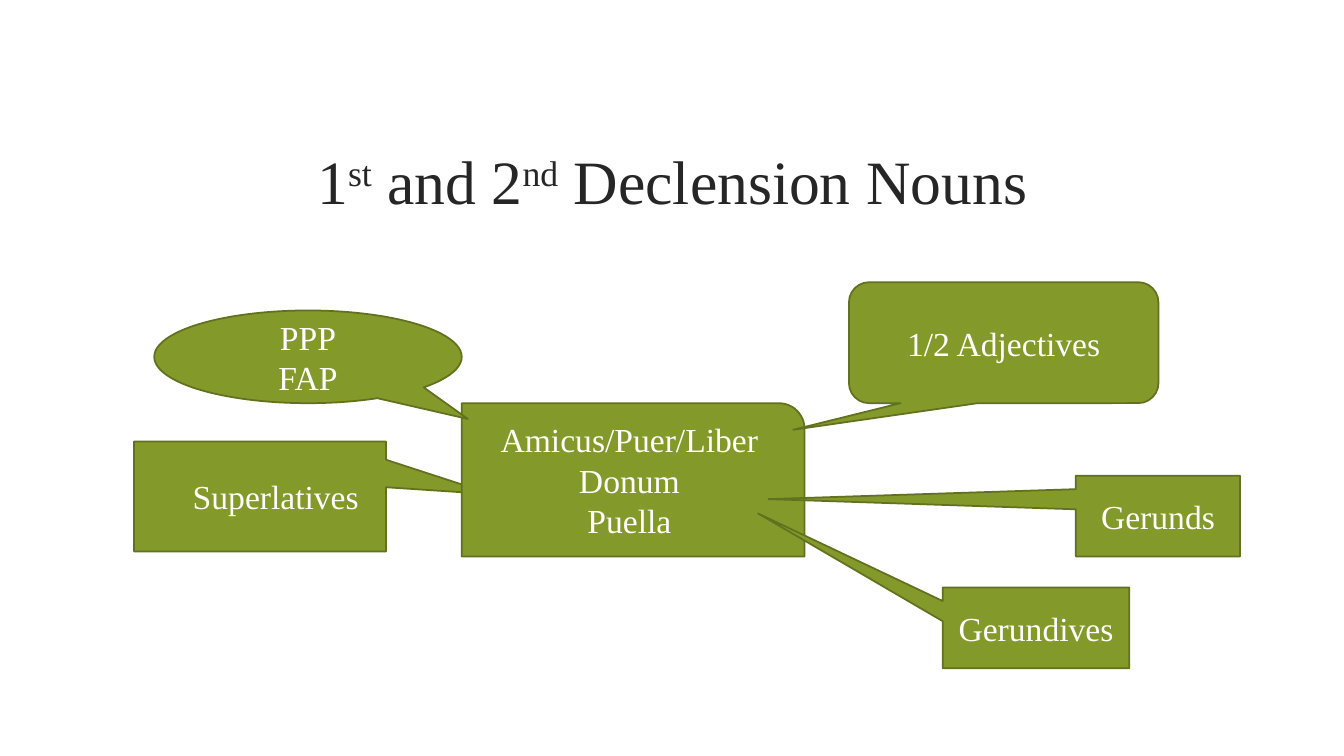
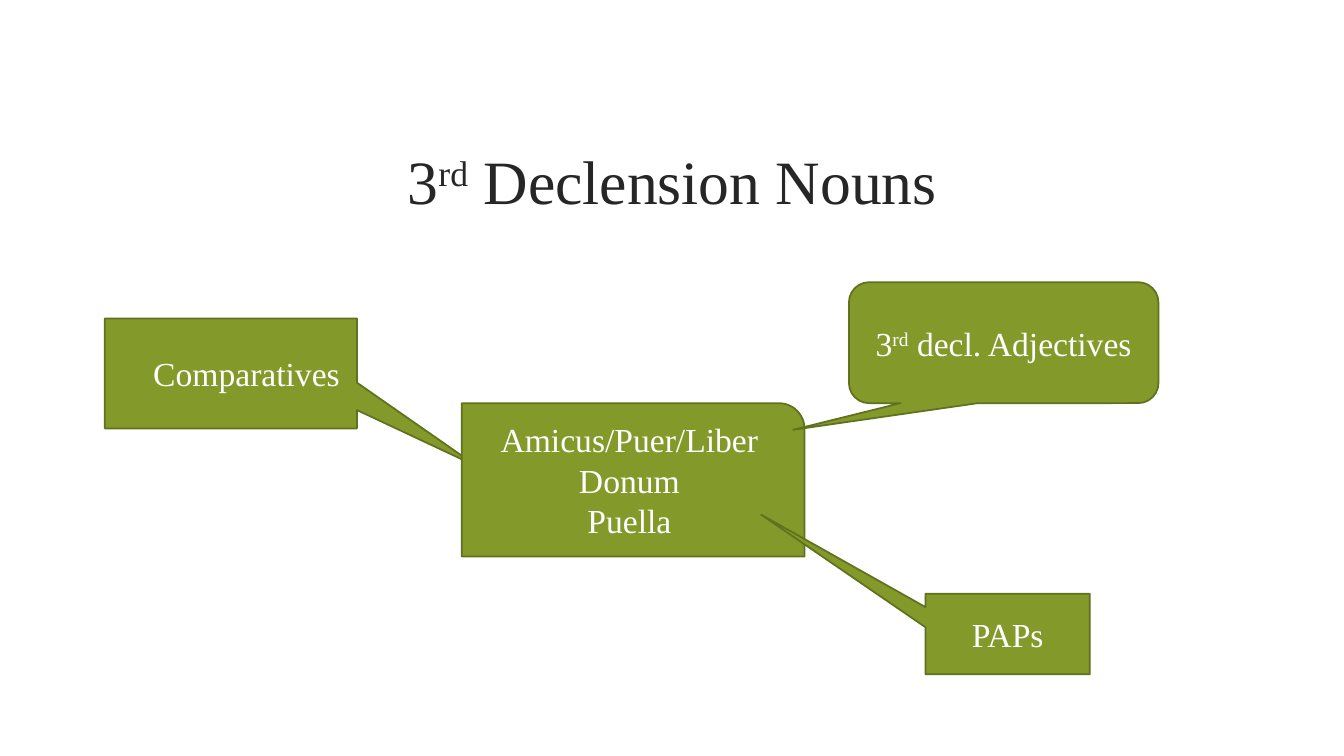
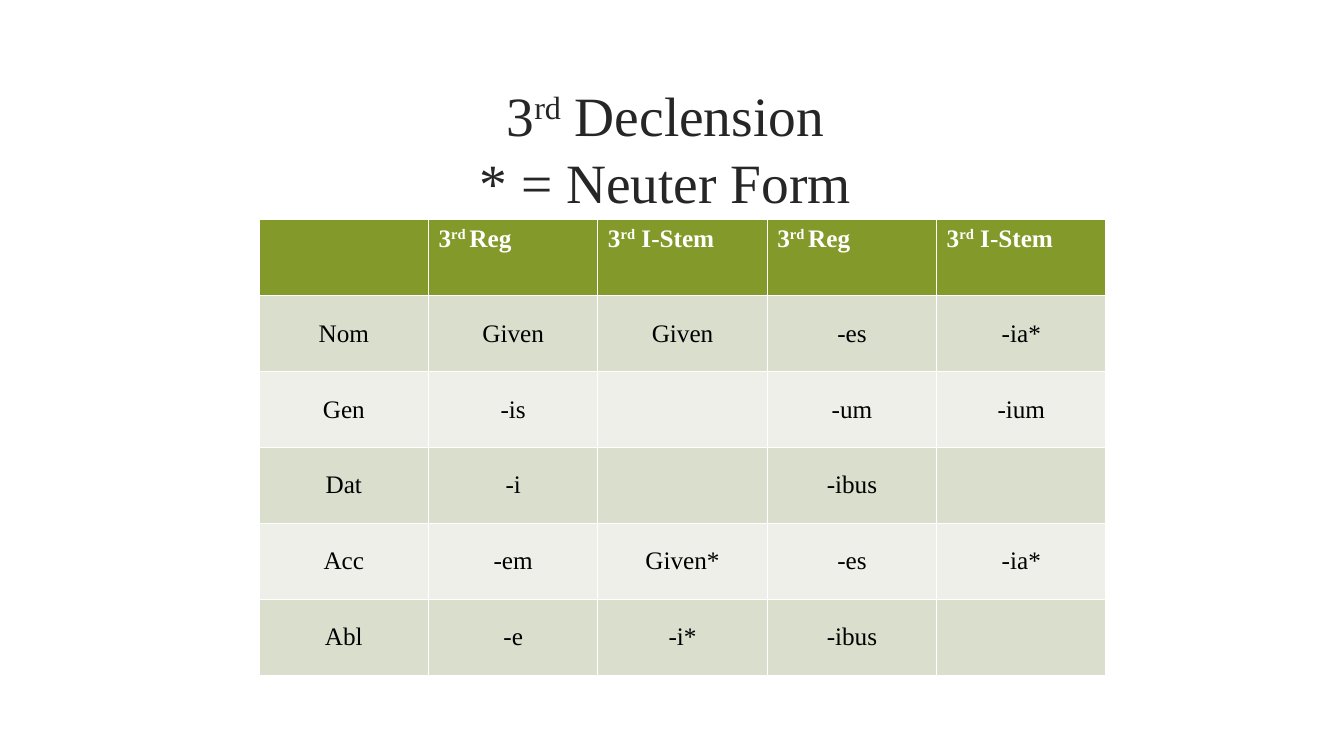
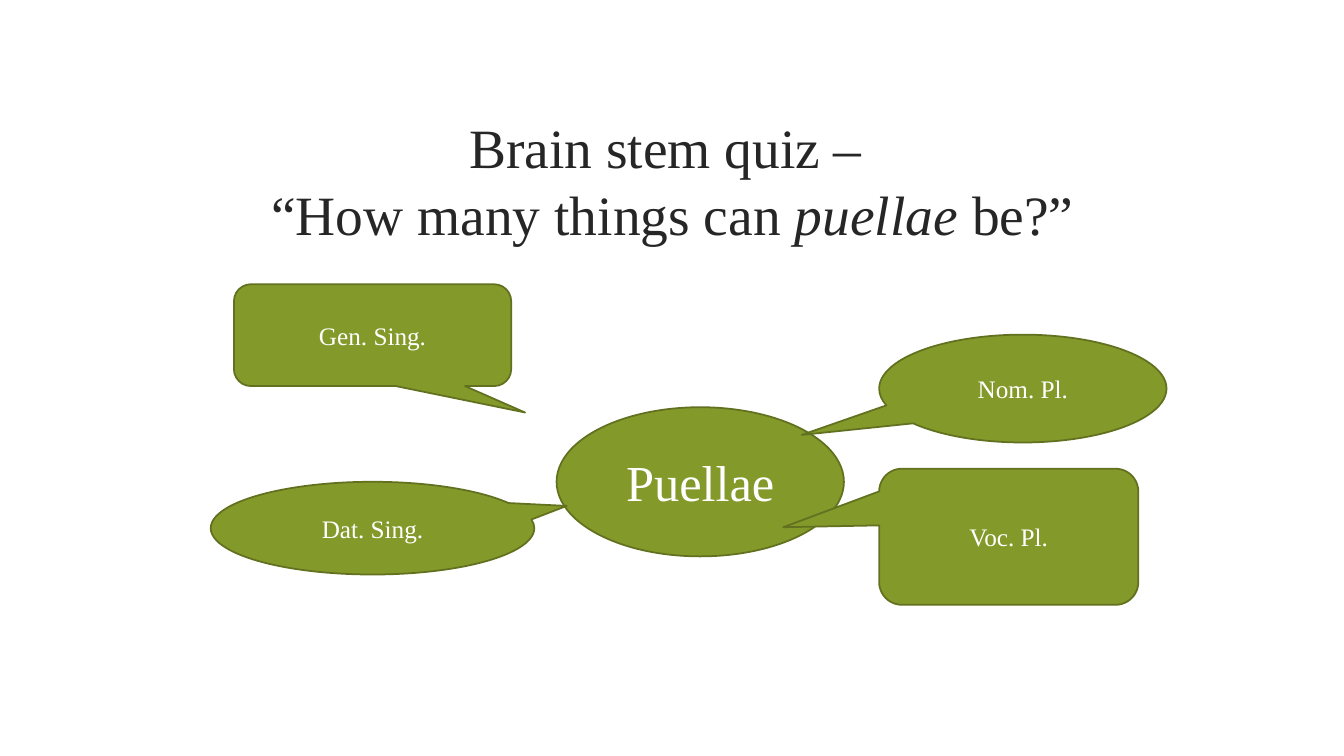
from dataclasses import dataclass

import pptx
import pptx.dml.color
import pptx.enum.shapes
import pptx.enum.text
import pptx.util
from pptx.util import Inches

COLORS = {
    "title": "262626",
    "green": "83992A",
    "outline": "61711F",
    "white": "FFFFFF",
    "black": "000000",
    "band_dark": "D9DECD",
    "band_light": "EDEFE8",
}
FONT = "Times New Roman"
CENTER = pptx.enum.text.PP_ALIGN.CENTER
LEFT = pptx.enum.text.PP_ALIGN.LEFT
MIDDLE = pptx.enum.text.MSO_ANCHOR.MIDDLE
TOP = pptx.enum.text.MSO_ANCHOR.TOP
Kind = pptx.enum.shapes.MSO_SHAPE


@dataclass(frozen=True)
class Bubble:
    """A green shape; tip is the callout point relative to its centre."""
    text: str
    kind: Kind
    left: float
    top: float
    width: float
    height: float
    tip: tuple[float, ...] = ()
    size: float = 24
    indent: float = 0


@dataclass(frozen=True)
class BubbleSlide:
    title: str
    title_size: float
    bubbles: tuple[Bubble, ...]


NOUNS = Bubble("Amicus/Puer/Liber\nDonum\nPuella", Kind.ROUND_1_RECTANGLE, 4.58, 4, 3.4, 1.52)


def adjectives(text: str) -> Bubble:
    return Bubble(text, Kind.ROUNDED_RECTANGULAR_CALLOUT, 8.42, 2.8, 3.07, 1.2, (-0.68, 0.72))


def degree(text: str, left: float, top: float, tip: tuple[float, float]) -> Bubble:
    return Bubble(text, Kind.RECTANGULAR_CALLOUT, left, top, 2.5, 1.09, tip, indent=0.31)


def verbal(text: str, left: float, top: float, width: float, tip: tuple[float, float]) -> Bubble:
    return Bubble(text, Kind.RECTANGULAR_CALLOUT, left, top, width, 0.8, tip)


FIRST_SECOND = BubbleSlide("1^st^ and 2^nd^ Declension Nouns", 44, (
    degree("Superlatives", 1.33, 4.38, (0.92, -0.02)),
    NOUNS,
    adjectives("1/2 Adjectives"),
    Bubble("PPP\nFAP", Kind.OVAL_CALLOUT, 1.53, 3.08, 3.05, 0.92, (0.52, 0.67)),
    verbal("Gerundives", 9.35, 5.83, 1.85, (-1.49, -1.42)),
    verbal("Gerunds", 10.67, 4.72, 1.63, (-2.37, -0.21)),
))
THIRD = BubbleSlide("3^rd^ Declension Nouns", 44, (
    degree("Comparatives", 1.04, 3.16, (0.98, 0.85)),
    NOUNS,
    adjectives("3^rd^ decl. Adjectives"),
    verbal("PAPs", 9.18, 5.89, 1.63, (-1.5, -1.48)),
))
QUIZ = BubbleSlide("Brain stem quiz – \v“How many things can _puellae_ be?”", 39.6, (
    Bubble("Puellae", Kind.OVAL, 5.52, 4.04, 2.85, 1.48, size=36),
    Bubble("Nom. Pl.", Kind.OVAL_CALLOUT, 8.72, 3.32, 2.85, 1.07, (-0.77, 0.43), 18),
    Bubble("Gen. Sing.", Kind.ROUNDED_RECTANGULAR_CALLOUT, 2.32, 2.82, 2.75, 1.01, (0.55, 0.76), 18),
    Bubble("Dat. Sing.", Kind.OVAL_CALLOUT, 2.09, 4.78, 3.21, 0.92, (0.6, -0.24), 18),
    Bubble("Voc. Pl.", Kind.ROUNDED_RECTANGULAR_CALLOUT, 8.72, 4.65, 2.57, 1.35, (-0.87, -0.07), 18),
))
ENDINGS = (
    ("", "3^rd ^Reg", "3^rd^ I-Stem", "3^rd ^Reg", "3^rd^ I-Stem"),
    ("Nom", "Given", "Given", "-es", "-ia*"),
    ("Gen", "-is", "", "-um", "-ium"),
    ("Dat", "-i", "", "-ibus", ""),
    ("Acc", "-em", "Given*", "-es", "-ia*"),
    ("Abl", "-e", "-i*", "-ibus", ""),
)


def rgb(name: str) -> pptx.dml.color.RGBColor:
    return pptx.dml.color.RGBColor.from_string(COLORS[name])


def write(frame, text: str, *, size: float, color: str, bold: bool = False, align=CENTER) -> None:
    """Fill a frame: ^raised^, _italic_, newline for a paragraph, \\v for a line break."""
    for number, content in enumerate(text.split("\n")):
        para = frame.add_paragraph() if number else frame.paragraphs[0]
        para.alignment = align
        for line_number, line in enumerate(content.split("\v")):
            if line_number:
                para.add_line_break()
            for level, part in enumerate(line.split("^")):
                for slant, piece in enumerate(part.split("_")):
                    if not piece:
                        continue
                    span = para.add_run()
                    span.text = piece
                    span.font.name = FONT
                    span.font.size = pptx.util.Pt(size)
                    span.font.color.rgb = rgb(color)
                    span.font.bold = bold
                    if slant % 2:
                        span.font.italic = True
                    if level % 2:
                        span.font._element.set("baseline", "30000")


def add_title(page, text: str, size: float, left: float = 1.42, top: float = 1.07) -> None:
    box = page.shapes.add_textbox(Inches(left), Inches(top), Inches(10.5), Inches(1.43))
    box.text_frame.word_wrap = True
    box.text_frame.vertical_anchor = MIDDLE
    write(box.text_frame, text, size=size, color="title")


def add_bubble(page, bubble: Bubble) -> None:
    shape = page.shapes.add_shape(bubble.kind, Inches(bubble.left), Inches(bubble.top),
                                  Inches(bubble.width), Inches(bubble.height))
    for index, value in enumerate(bubble.tip):
        shape.adjustments[index] = value
    shape.shadow.inherit = False
    shape.fill.solid()
    shape.fill.fore_color.rgb = rgb("green")
    shape.line.color.rgb = rgb("outline")
    shape.line.width = pptx.util.Pt(1.25)
    frame = shape.text_frame
    frame.word_wrap = True
    frame.vertical_anchor = MIDDLE
    frame.margin_left = Inches(0.1 + bubble.indent)
    write(frame, bubble.text, size=bubble.size, color="white")


def add_endings(page) -> None:
    rows, columns = len(ENDINGS), len(ENDINGS[0])
    table = page.shapes.add_table(rows, columns, Inches(2.57), Inches(2.18),
                                  Inches(8.4), Inches(4.52)).table
    for row, texts in enumerate(ENDINGS):
        header = row == 0
        fill = "green" if header else "band_dark" if row % 2 else "band_light"
        for column, text in enumerate(texts):
            cell = table.cell(row, column)
            cell.fill.solid()
            cell.fill.fore_color.rgb = rgb(fill)
            cell.vertical_anchor = TOP if header else MIDDLE
            write(cell.text_frame, text, size=18, color="white" if header else "black",
                  bold=header, align=LEFT if header else CENTER)


def main() -> None:
    deck = pptx.Presentation()
    deck.slide_width, deck.slide_height = Inches(13.33), Inches(7.5)
    blank = deck.slide_layouts[6]

    def add_bubble_slide(content: BubbleSlide) -> None:
        page = deck.slides.add_slide(blank)
        add_title(page, content.title, content.title_size)
        for bubble in content.bubbles:
            add_bubble(page, bubble)

    add_bubble_slide(FIRST_SECOND)
    add_bubble_slide(THIRD)
    page = deck.slides.add_slide(blank)
    add_title(page, "3^rd^ Declension\v* = Neuter Form", 39.6, 1.35, 0.75)
    add_endings(page)
    add_bubble_slide(QUIZ)
    deck.save("out.pptx")


if __name__ == "__main__":
    main()
